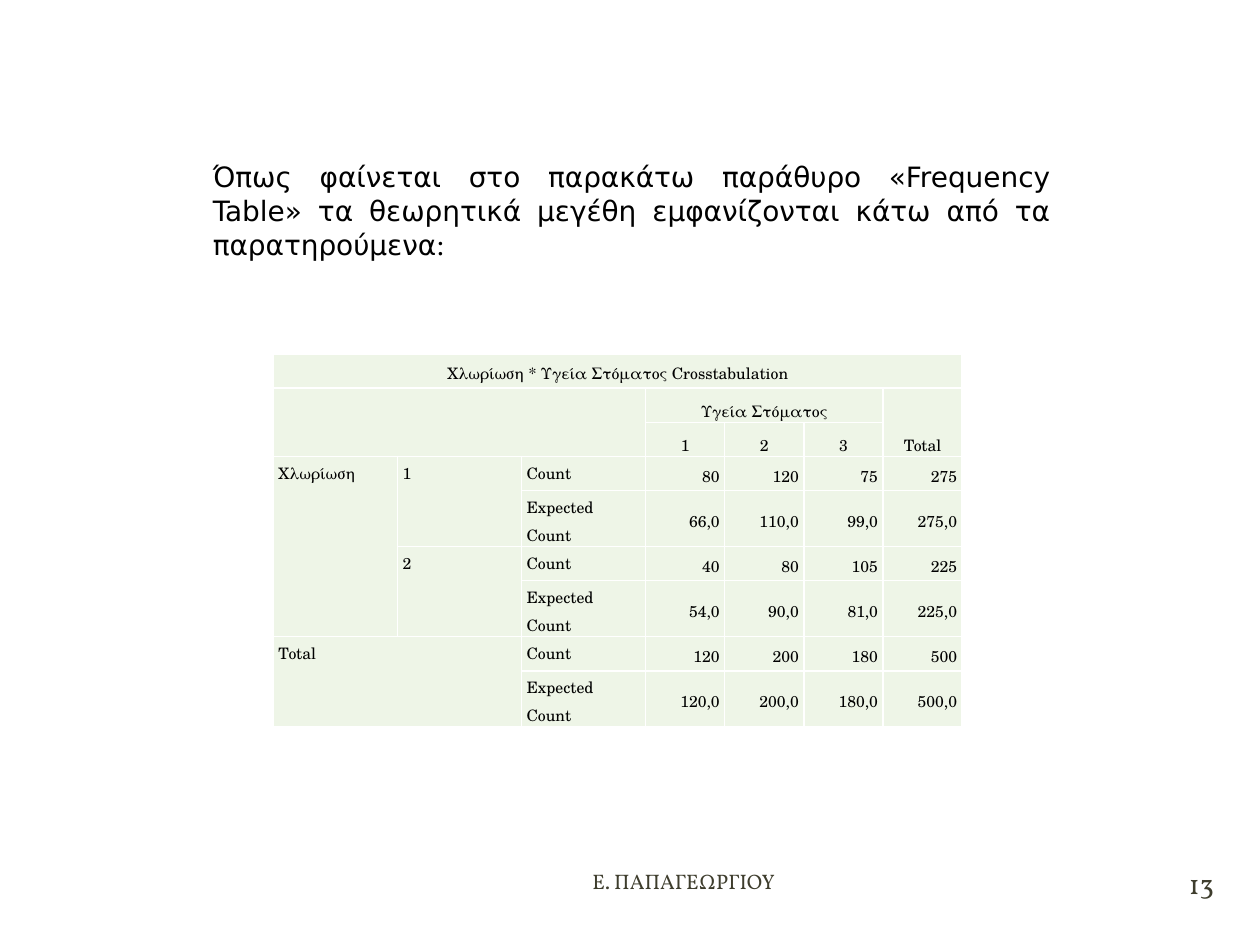
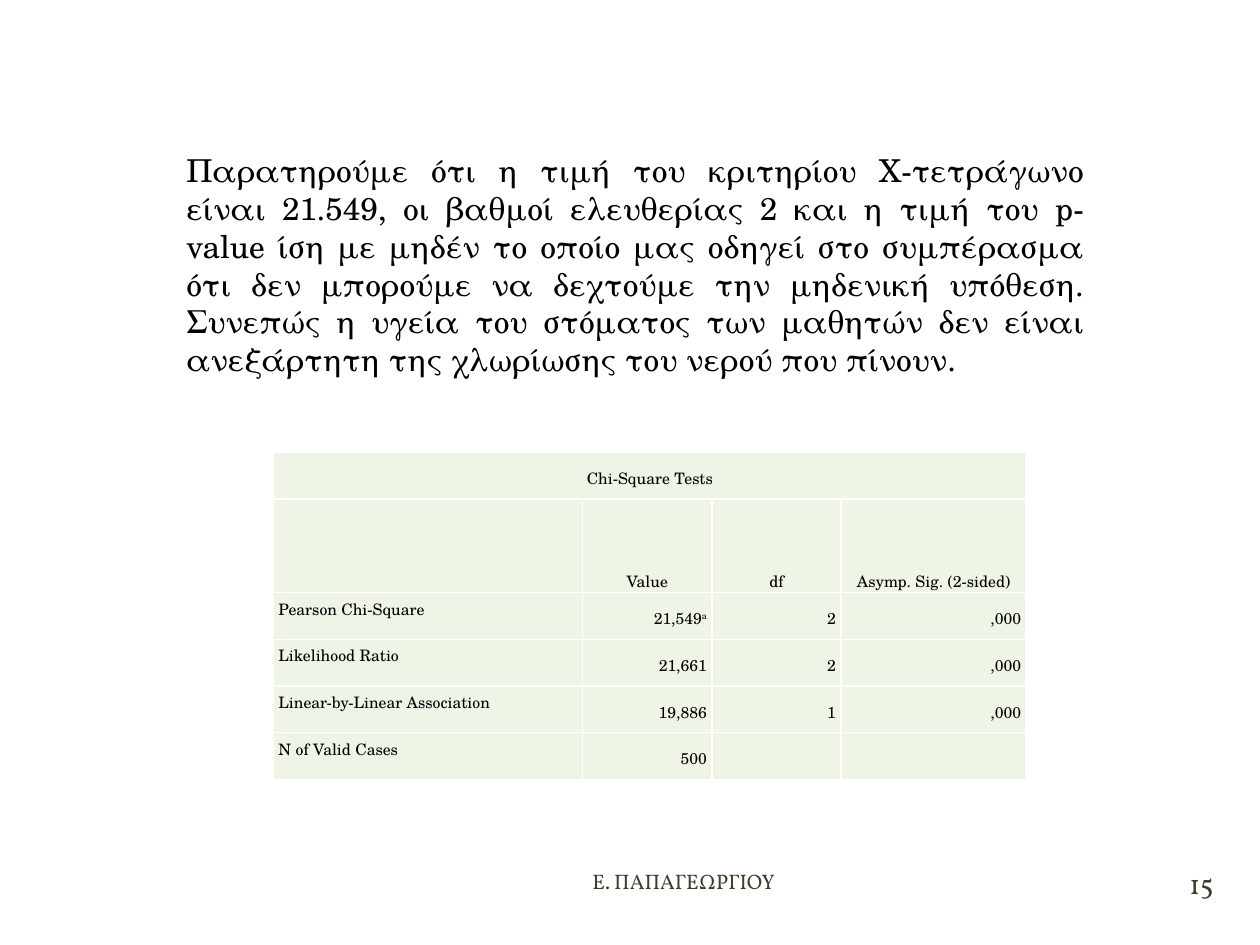
import pptx
import pptx.dml.color
import pptx.enum.text
import pptx.oxml
import pptx.oxml.ns
import pptx.util

RGBColor = pptx.dml.color.RGBColor
Align = pptx.enum.text.PP_ALIGN
Anchor = pptx.enum.text.MSO_ANCHOR
Pt = pptx.util.Pt

BLACK = RGBColor(0x00, 0x00, 0x00)
FOOTER_INK = RGBColor(0x3E, 0x3D, 0x2D)
CELL_FILL = RGBColor(0xEE, 0xF5, 0xE7)
BORDER = RGBColor(0xFF, 0xFF, 0xFF)

SANS = "DejaVu Sans"
SERIF = "TeX Gyre Schola"
FOOTER_FONT = "Vollkorn"

COLUMNS, ROWS = 100, 75  # layout grid over the slide
CELL_INDENT = 0.4

CROSSTAB = [
    ["Χλωρίωση * Υγεία Στόματος Crosstabulation"],
    ["", "", "", "Υγεία Στόματος", "", "", "Total"],
    ["", "", "", "1", "2", "3"],
    ["Χλωρίωση", "1", "Count", "80", "120", "75", "275"],
    ["", "", "Expected Count", "66,0", "110,0", "99,0", "275,0"],
    ["", "2", "Count", "40", "80", "105", "225"],
    ["", "", "Expected Count", "54,0", "90,0", "81,0", "225,0"],
    ["Total", "", "Count", "120", "200", "180", "500"],
    ["", "", "Expected Count", "120,0", "200,0", "180,0", "500,0"],
]
# Merged areas: first row, first column, last row, last column
CROSSTAB_MERGES = [
    (0, 0, 0, 6), (1, 0, 2, 2), (1, 3, 1, 5), (1, 6, 2, 6),
    (3, 0, 6, 0), (3, 1, 4, 1), (5, 1, 6, 1), (7, 0, 8, 1),
]

CHI_SQUARE = [
    ["Chi-Square Tests"],
    ["", "Value", "df", "Asymp. Sig. (2-sided)"],
    ["Pearson Chi-Square", "21,549^a", "2", ",000"],
    ["Likelihood Ratio", "21,661", "2", ",000"],
    ["Linear-by-Linear Association", "19,886", "1", ",000"],
    ["N of Valid Cases", "500"],
]


class Deck:
    def __init__(self):
        self.prs = pptx.Presentation()
        self.prs.slide_width = pptx.util.Inches(10)
        self.prs.slide_height = pptx.util.Inches(7.5)
        self.s = None

    def x(self, columns):
        return round(self.prs.slide_width * columns / COLUMNS)

    def y(self, rows):
        return round(self.prs.slide_height * rows / ROWS)

    def place(self, left, top, width, height):
        return self.x(left), self.y(top), self.x(width), self.y(height)

    def slide(self, number):
        self.s = self.prs.slides.add_slide(self.prs.slide_layouts[6])
        self.text((23.3, 67.8, 39.2, 4.2), "Ε. ΠΑΠΑΓΕΩΡΓΙΟΥ", 12, FOOTER_FONT,
                  FOOTER_INK, Align.RIGHT, Anchor.MIDDLE)
        tf = self.text((92, 67.6, 6.7, 5), str(number), 16, FOOTER_FONT,
                       FOOTER_INK, Align.CENTER, Anchor.MIDDLE)
        tf.margin_left = tf.margin_right = tf.margin_top = tf.margin_bottom = 0

    def style(self, p, size, font, color, align):
        p.alignment = align
        p.font.size = Pt(size)
        p.font.name = font
        p.font.color.rgb = color

    def text(self, box, text, size, font, color, align, anchor=Anchor.TOP):
        tf = self.s.shapes.add_textbox(*self.place(*box)).text_frame
        tf.word_wrap = True
        tf.vertical_anchor = anchor
        p = tf.paragraphs[0]
        p.add_run().text = text
        self.style(p, size, font, color, align)
        return tf

    def body(self, box, text, size, font):
        tf = self.text(box, text, size, font, BLACK, Align.JUSTIFY)
        tf.auto_size = pptx.enum.text.MSO_AUTO_SIZE.SHAPE_TO_FIT_TEXT
        return tf.paragraphs[0]

    def table(self, left, top, widths, heights, rows, merges, header_rows, label_columns):
        """Draw a table whose first row is its title; header_rows counts the title."""
        box = self.place(left, top, sum(widths), sum(heights))
        table = self.s.shapes.add_table(len(heights), len(widths), *box).table
        table.first_row = table.horz_banding = False
        for column, width in zip(table.columns, widths):
            column.width = self.x(width)
        for row, height in zip(table.rows, heights):
            row.height = self.y(height)
        for r in range(len(heights)):
            for c in range(len(widths)):
                if r == 0:
                    align, anchor = Align.CENTER, Anchor.MIDDLE
                elif r < header_rows:
                    align, anchor = Align.CENTER, Anchor.BOTTOM
                elif c < label_columns:
                    align, anchor = Align.LEFT, Anchor.TOP
                else:
                    align, anchor = Align.RIGHT, Anchor.MIDDLE
                text = rows[r][c] if c < len(rows[r]) else ""
                self.cell(table.cell(r, c), text, align, anchor)
        for r1, c1, r2, c2 in merges:
            table.cell(r1, c1).merge(table.cell(r2, c2))

    def cell(self, cell, text, align, anchor):
        """Fill one cell; the part of text after ^ is raised."""
        cell.margin_left = cell.margin_right = cell.margin_top = cell.margin_bottom = 0
        cell.vertical_anchor = anchor
        self.borders(cell)
        cell.fill.solid()
        cell.fill.fore_color.rgb = CELL_FILL
        p = cell.text_frame.paragraphs[0]
        self.style(p, 9, SERIF, BLACK, align)
        p.line_spacing = Pt(16)
        pPr = p._p.get_or_add_pPr()
        for side in ("marL", "marR"):
            pPr.set(side, str(self.x(CELL_INDENT)))
        base, _, raised = text.partition("^")
        if base:
            p.add_run().text = base
        if raised:
            r = p.add_run()
            r.text = raised
            r._r.get_or_add_rPr().set("baseline", "30000")

    def borders(self, cell):
        tcPr = cell._tc.get_or_add_tcPr()
        for side in ("lnL", "lnR", "lnT", "lnB"):
            tcPr.append(pptx.oxml.parse_xml(
                f'<a:{side} {pptx.oxml.ns.nsdecls("a")} w="{Pt(1)}">'
                f'<a:solidFill><a:srgbClr val="{BORDER}"/></a:solidFill></a:{side}>'))


def main():
    deck = Deck()

    deck.slide(13)
    p = deck.body(
        (15.9, 12.2, 68.5, 9.1),
        "Όπως φαίνεται στο παρακάτω παράθυρο «Frequency Table» τα θεωρητικά "
        "μεγέθη εμφανίζονται κάτω από τα παρατηρούμενα", 16, SANS)
    p.space_before = Pt(6)
    r = p.add_run()
    r.text = ": "
    r.font.name = SERIF
    deck.table(21.7, 28.1, [9.85] * 3 + [6.28] * 4, [2.71] * 9,
               CROSSTAB, CROSSTAB_MERGES, header_rows=3, label_columns=3)

    deck.slide(15)
    deck.table(21.7, 35.9, [24.55, 10.25, 10.25, 14.7], [3.71, 7.42] + [3.71] * 4,
               CHI_SQUARE, [(0, 0, 0, 3)], header_rows=2, label_columns=1)
    deck.body(
        (13.8, 11.5, 73.2, 19.2),
        "Παρατηρούμε ότι η τιμή του κριτηρίου Χ-τετράγωνο είναι 21.549, οι βαθμοί "
        "ελευθερίας 2 και η τιμή του p-value ίση με μηδέν το οποίο μας οδηγεί στο "
        "συμπέρασμα ότι δεν μπορούμε να δεχτούμε την μηδενική υπόθεση. Συνεπώς η "
        "υγεία του στόματος των μαθητών δεν είναι ανεξάρτητη της χλωρίωσης του "
        "νερού που πίνουν. ", 18, SERIF)

    deck.prs.save("out.pptx")


if __name__ == "__main__":
    main()
